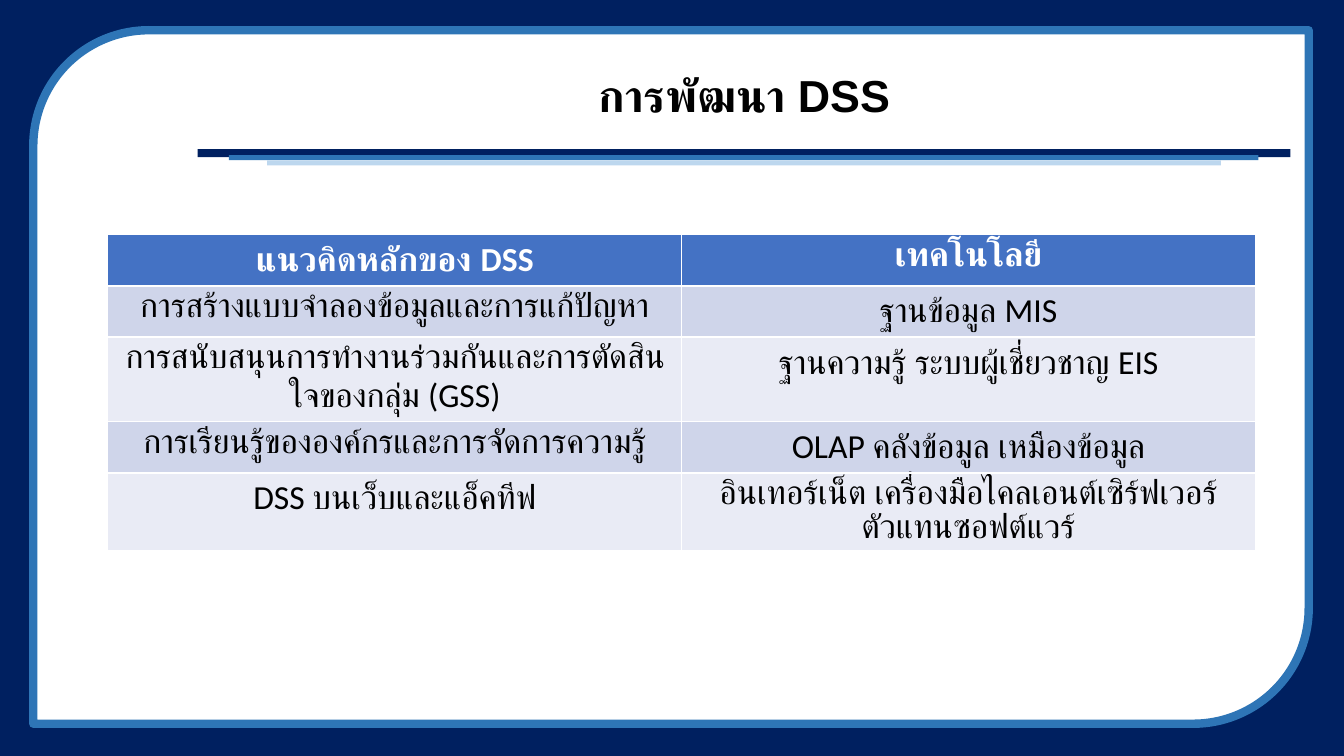
"""Build the slide on the development of DSS."""
from dataclasses import dataclass
from typing import Optional

from pptx import Presentation
from pptx.dml.color import RGBColor
from pptx.enum.shapes import MSO_SHAPE
from pptx.enum.text import MSO_ANCHOR, MSO_AUTO_SIZE, PP_ALIGN
from pptx.util import Inches, Pt

RECT = MSO_SHAPE.RECTANGLE
DIAG = MSO_SHAPE.ROUND_2_DIAG_RECTANGLE
CENTER = PP_ALIGN.CENTER
MIDDLE = MSO_ANCHOR.MIDDLE
NO_FIT = MSO_AUTO_SIZE.NONE
TITLE_ONLY = 5


@dataclass(frozen=True)
class Theme:
    navy: str = "002060"
    blue: str = "2E75B6"
    pale: str = "BDD7EE"
    white: str = "FFFFFF"
    black: str = "000000"
    header: str = "4472C4"
    bands: tuple = ("CFD5EA", "E9EBF5")
    title_font: str = "Arial"
    body_font: str = "Calibri"
    title_size: int = 32
    body_size: int = 24
    frame_width: int = 6


@dataclass(frozen=True)
class Panel:
    left: float
    top: float
    width: float
    height: float
    fill: str
    kind: int = RECT
    line: Optional[str] = None


THEME = Theme()
PANELS = (
    Panel(0, 0, 13.33, 7.5, THEME.navy),
    Panel(0.33, 0.3, 12.65, 6.88, THEME.white, DIAG, THEME.blue),
    Panel(1.96, 1.48, 10.84, 0.08, THEME.navy),
    Panel(2.27, 1.54, 10.21, 0.05, THEME.blue),
    Panel(2.65, 1.59, 9.46, 0.05, THEME.pale),
)
TITLE = "การพัฒนา DSS"
ROWS = (
    ("แนวคิดหลักของ DSS", "เทคโนโลยี"),
    ("การสร้างแบบจำลองข้อมูลและการแก้ปัญหา", "ฐานข้อมูล MIS"),
    ("การสนับสนุนการทำงานร่วมกันและการตัดสินใจของกลุ่ม (GSS)",
     "ฐานความรู้ ระบบผู้เชี่ยวชาญ EIS"),
    ("การเรียนรู้ขององค์กรและการจัดการความรู้", "OLAP คลังข้อมูล เหมืองข้อมูล"),
    ("DSS บนเว็บและแอ็คทีฟ",
     "อินเทอร์เน็ต เครื่องมือไคลเอนต์เซิร์ฟเวอร์ ตัวแทนซอฟต์แวร์"),
)
ROW_HEIGHT = 0.41
TABLE_BOX = (1.07, 2.33, 11.38, ROW_HEIGHT * len(ROWS))


def add_panel(s, panel: Panel) -> None:
    box = (panel.left, panel.top, panel.width, panel.height)
    sp = s.shapes.add_shape(panel.kind, *map(Inches, box))
    sp.shadow.inherit = False
    sp.fill.solid()
    sp.fill.fore_color.rgb = RGBColor.from_string(panel.fill)
    if panel.line:
        sp.line.color.rgb = RGBColor.from_string(panel.line)
        sp.line.width = Pt(THEME.frame_width)
    else:
        sp.line.fill.background()


def write(tf, text: str, color: str, **font) -> None:
    p = tf.paragraphs[0]
    p.alignment = CENTER
    r = p.add_run()
    r.text = text
    r.font.color.rgb = RGBColor.from_string(color)
    for name, value in font.items():
        setattr(r.font, name, value)


def add_title(s) -> None:
    sp = s.shapes.title
    sp.element.getparent().append(sp.element)
    box = dict(left=1.96, top=0.49, width=10.84, height=0.97)
    for name, value in box.items():
        setattr(sp, name, Inches(value))
    tf = sp.text_frame
    for name, value in dict(vertical_anchor=MIDDLE, auto_size=NO_FIT).items():
        setattr(tf, name, value)
    write(tf, TITLE, THEME.black, name=THEME.title_font,
          size=Pt(THEME.title_size), bold=True)
    tf.paragraphs[0].line_spacing = 0.9


def add_concepts(s) -> None:
    frame = s.shapes.add_table(len(ROWS), len(ROWS[0]), *map(Inches, TABLE_BOX))
    table = frame.table
    for i, row in enumerate(ROWS):
        is_header = i == 0
        fill = THEME.header if is_header else THEME.bands[(i - 1) % 2]
        color = THEME.white if is_header else THEME.black
        for j, text in enumerate(row):
            cell = table.cell(i, j)
            cell.fill.solid()
            cell.fill.fore_color.rgb = RGBColor.from_string(fill)
            write(cell.text_frame, text, color, name=THEME.body_font,
                  size=Pt(THEME.body_size), bold=is_header)


def main() -> None:
    prs = Presentation()
    prs.slide_width, prs.slide_height = Inches(13.33), Inches(7.5)
    s = prs.slides.add_slide(prs.slide_layouts[TITLE_ONLY])
    for panel in PANELS:
        add_panel(s, panel)
    add_title(s)
    add_concepts(s)
    prs.save("out.pptx")


if __name__ == "__main__":
    main()
